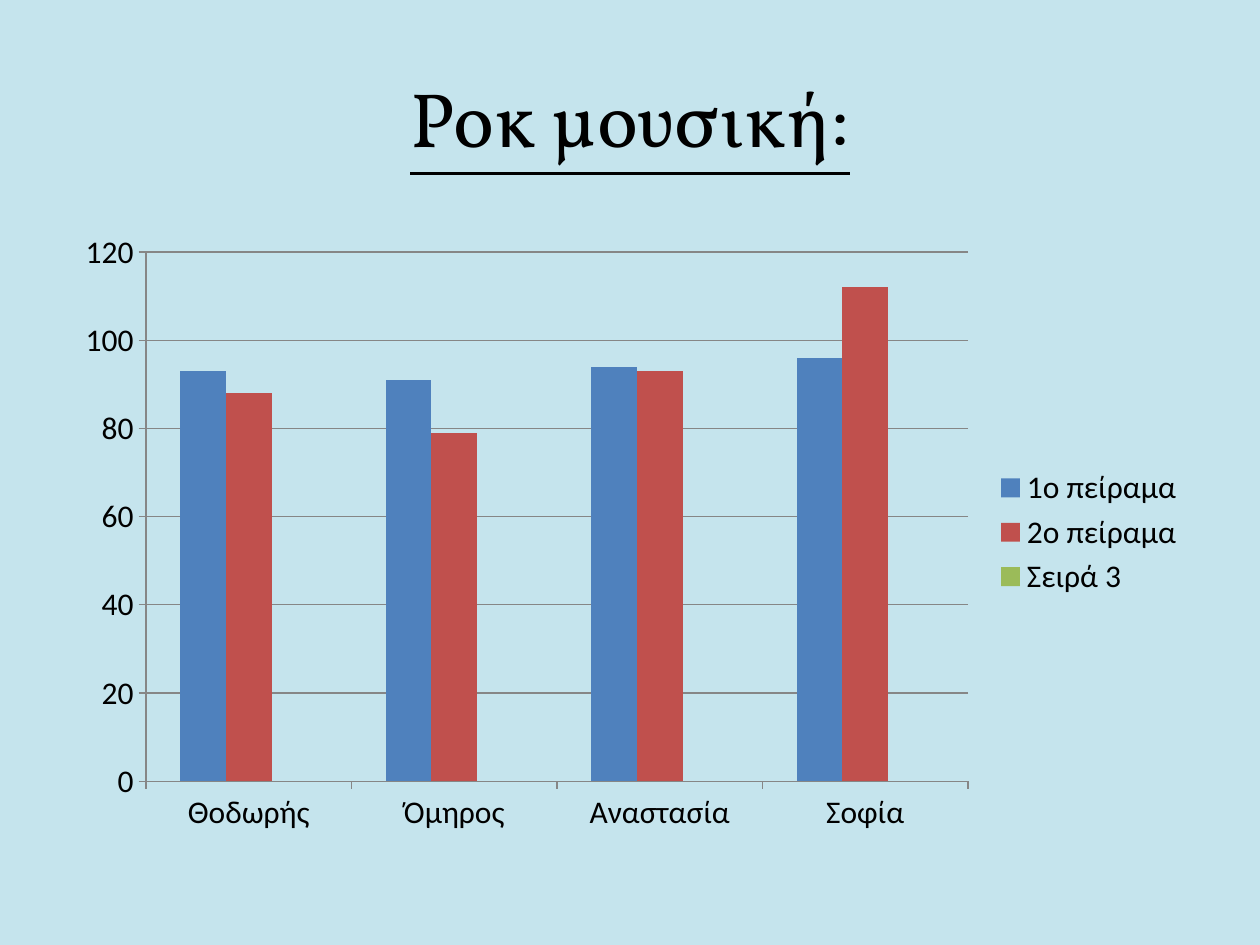
from pptx import Presentation
from pptx.chart.data import CategoryChartData
from pptx.dml.color import RGBColor
from pptx.enum.chart import XL_CHART_TYPE, XL_LEGEND_POSITION, XL_TICK_MARK
from pptx.enum.text import MSO_ANCHOR, PP_ALIGN
from pptx.util import Inches, Pt

BACKGROUND = RGBColor(0xC5, 0xE4, 0xED)
BLACK = RGBColor(0, 0, 0)
GRAY = RGBColor(0x86, 0x86, 0x86)
BLUE = RGBColor(0x4F, 0x81, 0xBD)
RED = RGBColor(0xC0, 0x50, 0x4D)
GREEN = RGBColor(0x9B, 0xBB, 0x59)

NAMES = ["Θοδωρής", "Όμηρος", "Αναστασία", "Σοφία"]
SERIES = [
    ("1ο πείραμα", [93, 91, 94, 96], BLUE),
    ("2ο πείραμα", [88, 79, 93, 112], RED),
    ("Σειρά 3", [None] * len(NAMES), GREEN),
]


def add_title(s, text):
    tf = s.shapes.add_textbox(Inches(0.5), Inches(0.3), Inches(9), Inches(1.25)).text_frame
    tf.word_wrap = True
    tf.vertical_anchor = MSO_ANCHOR.MIDDLE
    p = tf.paragraphs[0]
    p.text = text
    p.alignment = PP_ALIGN.CENTER
    p.font.name = "Vollkorn"
    p.font.size = Pt(44)
    p.font.underline = True
    p.font.color.rgb = BLACK


def style_axis(axis):
    axis.major_tick_mark = XL_TICK_MARK.OUTSIDE
    axis.minor_tick_mark = XL_TICK_MARK.NONE
    axis.format.line.color.rgb = GRAY
    axis.format.line.width = Pt(0.75)


def add_column_chart(s):
    data = CategoryChartData()
    data.categories = NAMES
    for name, values, _ in SERIES:
        data.add_series(name, values)
    chart = s.shapes.add_chart(
        XL_CHART_TYPE.COLUMN_CLUSTERED,
        Inches(0.5), Inches(1.75), Inches(9), Inches(4.95), data).chart
    chart.has_title = False
    chart.font.name = "Calibri"
    chart.font.size = Pt(18)
    chart.font.color.rgb = BLACK

    # Columns
    plot = chart.plots[0]
    plot.vary_by_categories = False
    plot.gap_width = 150
    plot.overlap = 0
    for series, (_, _, color) in zip(plot.series, SERIES):
        series.format.fill.solid()
        series.format.fill.fore_color.rgb = color

    # Axes and gridlines
    style_axis(chart.category_axis)
    axis = chart.value_axis
    style_axis(axis)
    axis.minimum_scale, axis.maximum_scale, axis.major_unit = 0, 120, 20
    axis.has_major_gridlines = True
    axis.major_gridlines.format.line.color.rgb = GRAY
    axis.major_gridlines.format.line.width = Pt(0.75)

    # Legend
    chart.has_legend = True
    chart.legend.position = XL_LEGEND_POSITION.RIGHT
    chart.legend.include_in_layout = False


def main():
    prs = Presentation()
    prs.slide_width, prs.slide_height = Inches(10), Inches(7.5)
    s = prs.slides.add_slide(prs.slide_layouts[6])
    s.background.fill.solid()
    s.background.fill.fore_color.rgb = BACKGROUND
    add_title(s, "Ροκ μουσική:")
    add_column_chart(s)
    prs.save("out.pptx")


if __name__ == "__main__":
    main()
